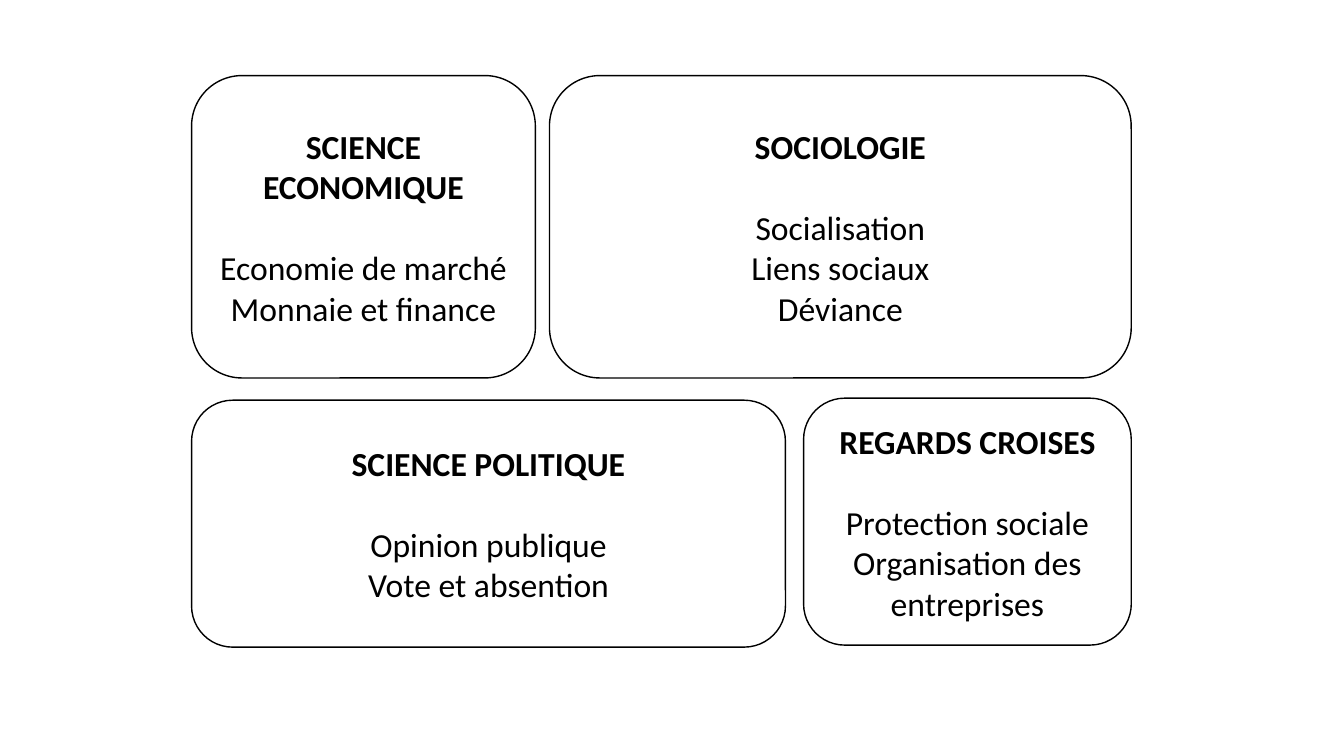
from dataclasses import dataclass

from pptx import Presentation
from pptx.dml.color import RGBColor
from pptx.enum.shapes import MSO_SHAPE
from pptx.enum.text import MSO_ANCHOR, PP_ALIGN
from pptx.util import Inches, Pt

ROUND = MSO_SHAPE.ROUNDED_RECTANGLE
MIDDLE = MSO_ANCHOR.MIDDLE
CENTER = PP_ALIGN.CENTER


@dataclass(frozen=True)
class Theme:
    ink: RGBColor = RGBColor(0, 0, 0)
    font: str = "Calibri"
    size: float = 24
    gap: float = 29.3  # one line of text below each heading
    line: float = 1


THEME = Theme()
LEFT, RIGHT = 1.9, 11.22

# Each row: height, gap between its two cards, then the cards
# Each card: width (None takes the rest of the row), top, heading, topics
ROWS = [
    (3, 0.14, [
        (3.41, 0.75, "SCIENCE ECONOMIQUE",
         ["Economie de marché Monnaie et finance"]),
        (None, 0.75, "SOCIOLOGIE",
         ["Socialisation", "Liens sociaux", "Déviance"]),
    ]),
    (2.45, 0.18, [
        (5.89, 3.97, "SCIENCE POLITIQUE",
         ["Opinion publique", "Vote et absention"]),
        (None, 3.95, "REGARDS CROISES",
         ["Protection sociale", "Organisation des entreprises"]),
    ]),
]


def add_card(slide, box, head, topics):
    card = slide.shapes.add_shape(ROUND, *map(Inches, box))
    card.shadow.inherit = False
    card.fill.background()
    card.line.color.rgb = THEME.ink
    card.line.width = Pt(THEME.line)
    frame = card.text_frame
    frame.word_wrap = True
    frame.vertical_anchor = MIDDLE
    for i, text in enumerate([head, *topics]):
        para = frame.add_paragraph() if i else frame.paragraphs[0]
        para.alignment = CENTER
        para.space_after = Pt(0 if i else THEME.gap)
        run = para.add_run()
        run.text = text
        run.font.name = THEME.font
        run.font.size = Pt(THEME.size)
        run.font.bold = i == 0
        run.font.color.rgb = THEME.ink


def main():
    deck = Presentation()
    deck.slide_width, deck.slide_height = Inches(13.33), Inches(7.5)
    slide = deck.slides.add_slide(deck.slide_layouts[6])
    for height, gap, cards in ROWS:
        left = LEFT
        for width, top, head, topics in cards:
            width = width or RIGHT - left
            add_card(slide, (left, top, width, height), head, topics)
            left += width + gap
    deck.save("out.pptx")


if __name__ == "__main__":
    main()
